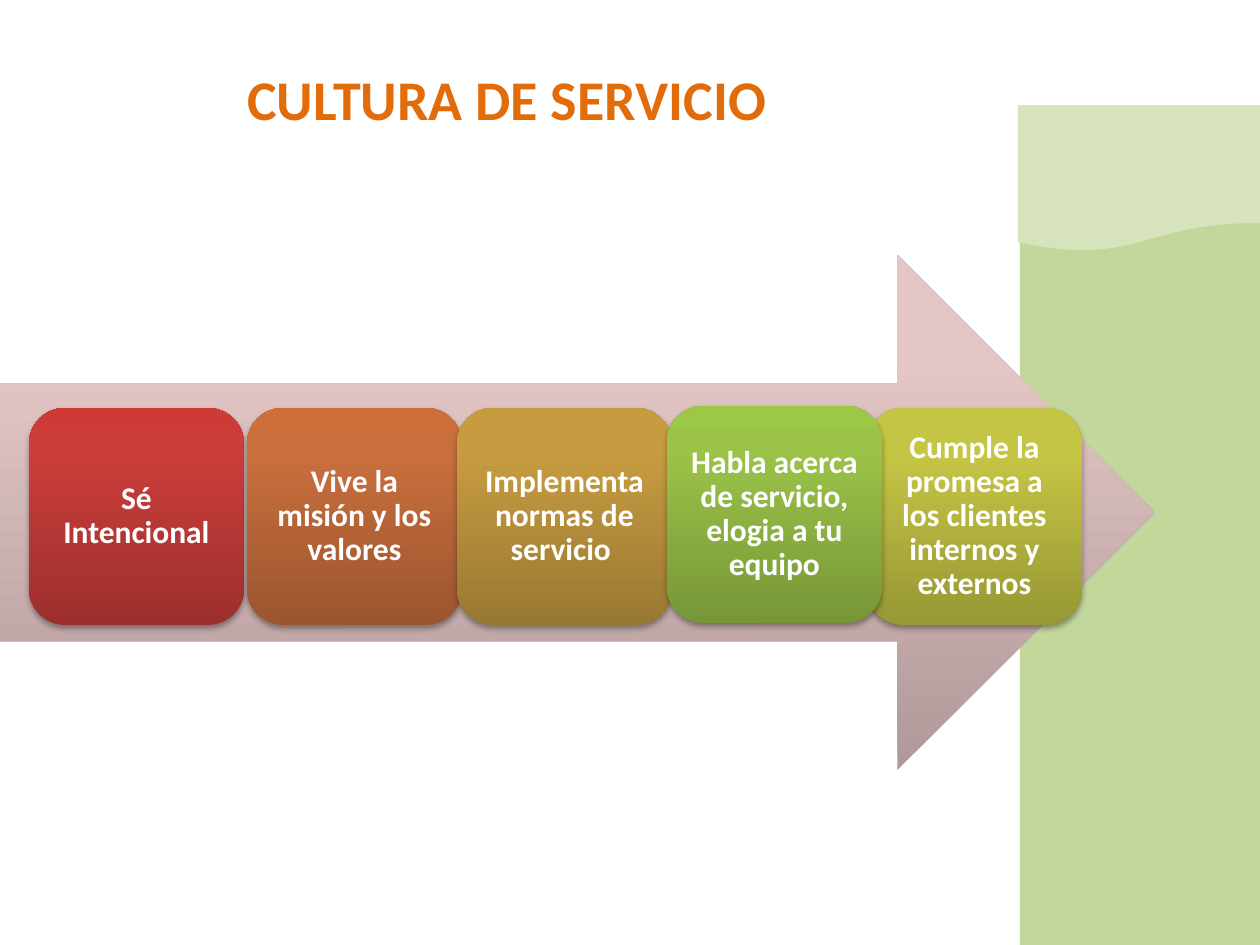
from lxml import etree
from pptx import Presentation, util as u
from pptx.dml.color import RGBColor
from pptx.enum import shapes, text
from pptx.oxml.ns import qn

COLORS = {
    "title": "E36C0A", "label": "FFFFFF", "shadow": "000000",
    "side panel": "C3D69B", "side wave": "D6E3BC",
}
ARROW_GRADIENT = ("B09999", "E4C6C6", "E6C6C6")
STOPS = (0, 80000, 100000)
KIND = shapes.MSO_SHAPE


def px(length):
    return u.Emu(round(length * 914400 / 126))


def add_filled_shape(kind, box, fill):
    """Add a borderless shape; fill is a hex colour or three gradient colours, bottom to top."""
    shape = slide.shapes.add_shape(kind, *map(px, box))
    shape.shadow.inherit = False
    shape.line.fill.background()
    if isinstance(fill, str):
        shape.fill.solid()
        shape.fill.fore_color.rgb = RGBColor.from_string(fill)
        return shape
    shape.fill.gradient()
    shape.fill.gradient_angle = 90
    stop_list = shape._element.spPr.find(".//" + qn("a:gsLst"))
    for stop in list(stop_list):
        stop_list.remove(stop)
    for position, color in zip(STOPS, fill):
        stop = etree.SubElement(stop_list, qn("a:gs"), pos=str(position))
        etree.SubElement(stop, qn("a:srgbClr"), val=color)
    return shape


def write_text(shape, wording, size, color, margins):
    frame = shape.text_frame
    frame.word_wrap = True
    frame.vertical_anchor = text.MSO_ANCHOR.MIDDLE
    for side, margin in zip(("left", "top", "right", "bottom"), margins):
        setattr(frame, "margin_" + side, px(margin))
    paragraph = frame.paragraphs[0]
    paragraph.text = wording
    paragraph.alignment = text.PP_ALIGN.CENTER
    paragraph.line_spacing = 0.9
    font_format = {"name": "Calibri", "size": u.Pt(size), "bold": True}
    for name, value in font_format.items():
        setattr(paragraph.font, name, value)
    paragraph.font.color.rgb = RGBColor.from_string(color)


presentation = Presentation()
presentation.slide_width, presentation.slide_height = px(1260), px(945)
slide = presentation.slides.add_slide(presentation.slide_layouts[6])

add_filled_shape(KIND.RECTANGLE, (1020, 140, 240, 805), COLORS["side panel"])
add_filled_shape(KIND.FLOWCHART_DOCUMENT, (1018, 105, 242, 147), COLORS["side wave"])
add_filled_shape(KIND.RIGHT_ARROW, (0, 255, 1155, 515), ARROW_GRADIENT)

# Left, top, wording, gradient; the fourth step lies over the fifth.
steps = [
    (29, 408, "Sé Intencional", ("9C2F2D", "CB3E3A", "CE3B37")),
    (247, 408, "Vive la misión y los valores", ("9B552F", "C96F3D", "CD6E3B")),
    (457, 408, "Implementa normas de servicio ", ("997832", "C79C41", "CA9D3F")),
    (867, 408, "Cumple la promesa a los clientes internos y externos",
     ("989835", "C5C545", "C8C842")),
    (667, 406, "Habla acerca de servicio, elogia a tu equipo",
     ("779737", "9BC348", "9DC746")),
]
for left, top, wording, gradient in steps:
    step = add_filled_shape(KIND.ROUNDED_RECTANGLE, (left, top, 215, 217), gradient)
    effects = step._element.spPr.find(qn("a:effectLst"))
    shadow = etree.SubElement(effects, qn("a:outerShdw"), blurRad="40000",
                              dist="23000", dir="5400000", rotWithShape="0")
    shadow_color = etree.SubElement(shadow, qn("a:srgbClr"), val=COLORS["shadow"])
    etree.SubElement(shadow_color, qn("a:alpha"), val="35000")
    write_text(step, wording, 18, COLORS["label"], (10, 10, 10, 10))

title = slide.shapes.add_textbox(*map(px, (21, 32, 955, 118)))
write_text(title, "CULTURA DE SERVICIO", 32, COLORS["title"], (30, 20, 13, 6))
title.text_frame.paragraphs[0].line_spacing = 1.0

presentation.save("out.pptx")
